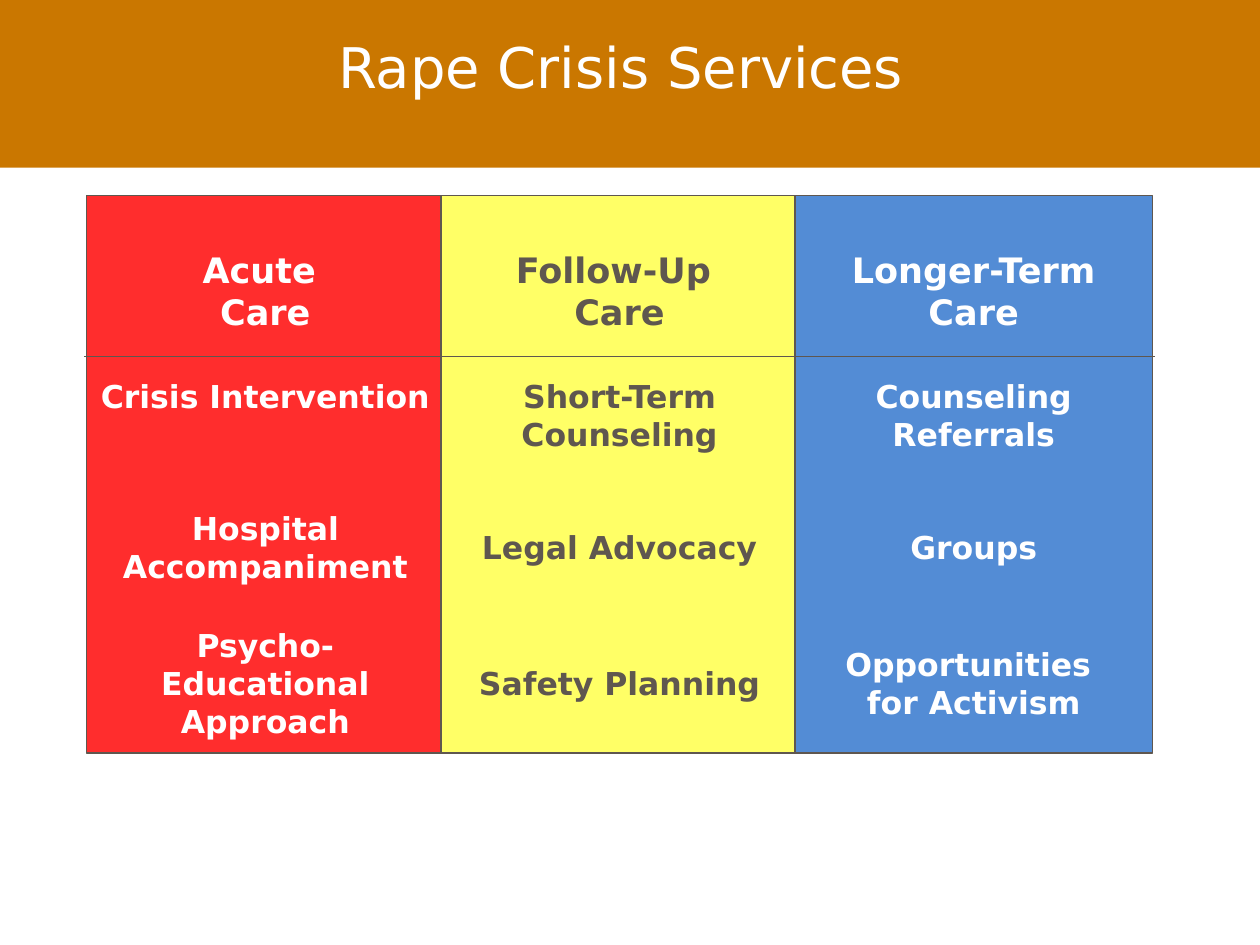
from dataclasses import dataclass

from lxml.etree import SubElement
from pptx import Presentation
from pptx.dml.color import RGBColor
from pptx.enum.shapes import MSO_CONNECTOR, MSO_SHAPE
from pptx.enum.text import MSO_ANCHOR, PP_ALIGN
from pptx.oxml.ns import qn
from pptx.util import Cm, Pt


@dataclass(frozen=True)
class Theme:
    font: str = "DejaVu Sans"
    banner: str = "CA7700"
    acute: str = "FF2D2D"
    follow_up: str = "FFFF66"
    longer_term: str = "538CD5"
    dark: str = "5F574F"
    light: str = "FFFFFF"
    title_size: int = 32
    heading_size: int = 20
    service_size: int = 18
    line_width: float = 0.75


theme = Theme()


def add_text(text, left, top, width, height, *, size, color, bold=True,
             anchor=MSO_ANCHOR.TOP, line_spacing=None):
    frame = slide.shapes.add_textbox(Cm(left), Cm(top), Cm(width), Cm(height)).text_frame
    frame.word_wrap = True
    frame.vertical_anchor = anchor
    frame.text = text
    for paragraph in frame.paragraphs:
        paragraph.alignment = PP_ALIGN.CENTER
        paragraph.line_spacing = line_spacing
        for run in paragraph.runs:
            run.font.name = theme.font
            run.font.size = Pt(size)
            run.font.bold = bold
            run.font.color.rgb = RGBColor.from_string(color)


def add_panel(left, top, width, height, fill, outline=None):
    panel = slide.shapes.add_shape(MSO_SHAPE.RECTANGLE, Cm(left), Cm(top), Cm(width), Cm(height))
    panel.shadow.inherit = False
    panel.fill.solid()
    panel.fill.fore_color.rgb = RGBColor.from_string(fill)
    if outline:
        panel.line.color.rgb = RGBColor.from_string(outline)
        panel.line.width = Pt(theme.line_width)
    else:
        panel.line.fill.background()


presentation = Presentation()
presentation.slide_width, presentation.slide_height = Cm(25.4), Cm(19.05)
slide = presentation.slides.add_slide(presentation.slide_layouts[6])

# Title banner
add_panel(0, 0, 25.4, 3.38, theme.banner)
add_text("Rape Crisis Services ", 1.27, 0.23, 22.86, 2.46, size=theme.title_size,
         color=theme.light, bold=False, anchor=MSO_ANCHOR.MIDDLE, line_spacing=0.78)

# Care stages: fill, text colour, heading, services with their line counts
stages = [
    (theme.acute, theme.light, "Acute \nCare",
     [("Crisis Intervention", 2), ("Hospital Accompaniment", 2),
      ("Psycho-Educational Approach", 3)]),
    (theme.follow_up, theme.dark, "Follow-Up \nCare",
     [("Short-Term Counseling", 2), ("Legal Advocacy", 1), ("Safety Planning", 1)]),
    (theme.longer_term, theme.light, "Longer-Term Care",
     [("Counseling Referrals", 2), ("Groups", 1), ("Opportunities \nfor Activism", 2)]),
]
stage_left, stage_step, stage_width = 1.75, 7.14, 7.2
service_middles = [8.37, 11.03, 13.78]
stage_lefts = [stage_left + index * stage_step for index in range(len(stages))]

# Coloured columns
for left, (fill, _, _, _) in zip(stage_lefts, stages):
    add_panel(left, 3.94, stage_width, 11.24, fill, theme.dark)

# Rule under the headings
heading_rule = slide.shapes.add_connector(
    MSO_CONNECTOR.STRAIGHT, Cm(1.7), Cm(7.19), Cm(23.29), Cm(7.19))
heading_rule.line.color.rgb = RGBColor.from_string(theme.dark)
heading_rule.line.width = Pt(theme.line_width)
SubElement(heading_rule._element.spPr, qn("a:effectLst"))

# Headings and services, each service centred on its row
for left, (_, color, heading, services) in zip(stage_lefts, stages):
    add_text(heading, left, 4.88, stage_width, 1.96, size=theme.heading_size, color=color)
    for middle, (service, lines) in zip(service_middles, services):
        height = 0.25 + 0.77 * lines
        add_text(service, left, middle - height / 2, stage_width, height,
                 size=theme.service_size, color=color)

presentation.save("out.pptx")
